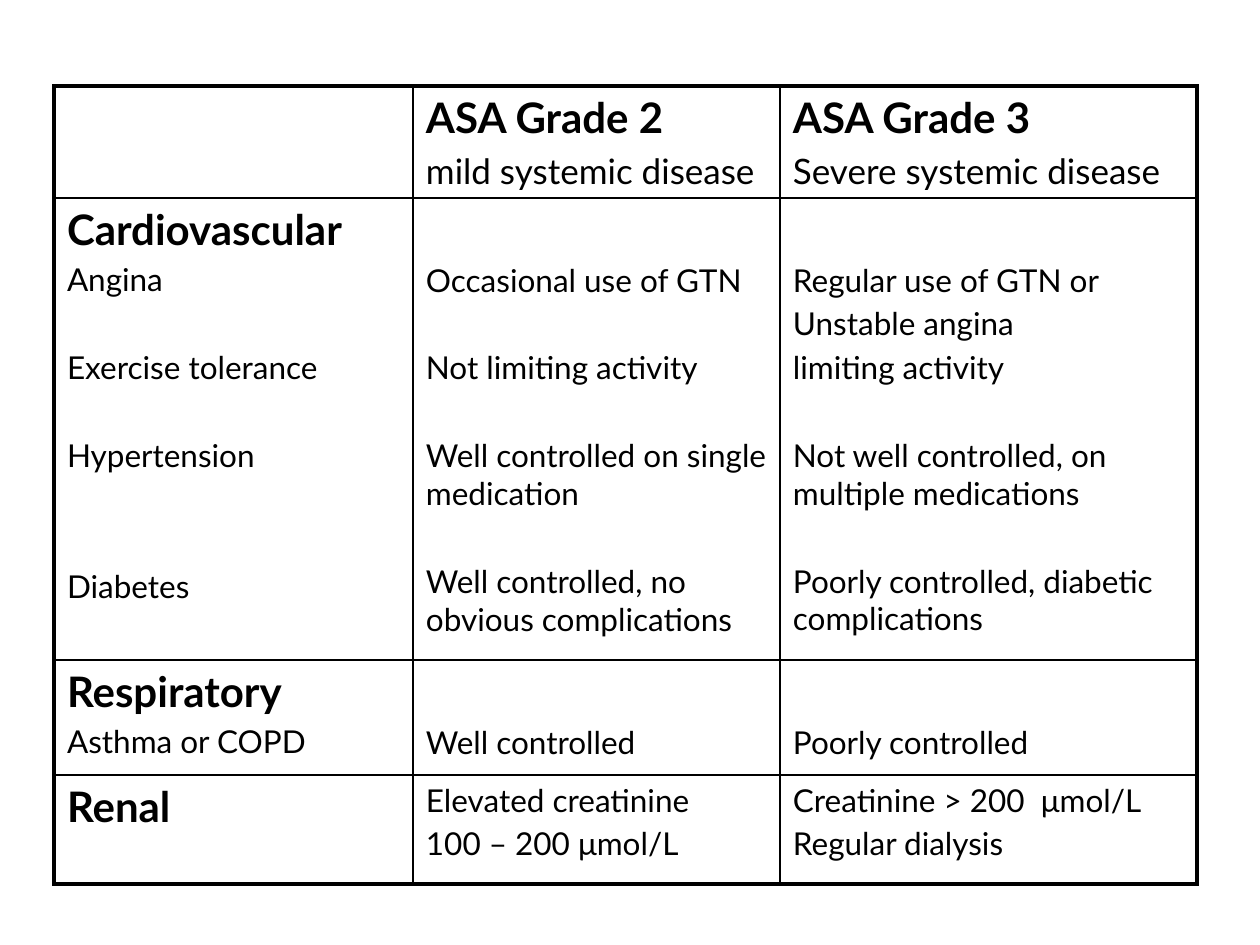
"""Build a slide with a table that compares ASA grade 2 with ASA grade 3."""
from dataclasses import dataclass, field

from lxml import etree
from pptx import Presentation
from pptx.dml.color import RGBColor
from pptx.enum.text import MSO_ANCHOR, PP_ALIGN
from pptx.oxml.ns import qn
from pptx.util import Emu, Pt

TOP, LEFT = MSO_ANCHOR.TOP, PP_ALIGN.LEFT
PX = 914400 / 126
BLANK_LAYOUT = 6


def px(n):
    return Emu(round(n * PX))


@dataclass
class Theme:
    ink: str = "000000"
    inner: float = 1
    outer: float = 2.25
    space: int = 6
    fonts: dict = field(default_factory=lambda: {
        "head": {"name": "Lato", "size": Pt(24), "bold": True},
        "sub": {"name": "Lato", "size": Pt(20), "bold": False},
        "body": {"name": "Lato", "size": Pt(18), "bold": False},
    })


class Deck:
    def __init__(self, theme, width, height):
        self.theme = theme
        self.prs = Presentation()
        self.prs.slide_width, self.prs.slide_height = px(width), px(height)
        self.s = self.prs.slides.add_slide(self.prs.slide_layouts[BLANK_LAYOUT])

    def table(self, x, y, cols, rows, cells):
        shape = self.s.shapes.add_table(
            len(rows), len(cols), px(x), px(y), px(sum(cols)), px(sum(rows)))
        table = shape.table
        table.first_row = table.horz_banding = False
        for col, width in zip(table.columns, cols):
            col.width = px(width)
        for row, height in zip(table.rows, rows):
            row.height = px(height)
        for i, line in enumerate(cells):
            for j, paragraphs in enumerate(line):
                cell = table.cell(i, j)
                edges = {"lnL": j == 0, "lnR": j == len(cols) - 1,
                         "lnT": i == 0, "lnB": i == len(rows) - 1}
                self.borders(cell, edges)
                cell.fill.background()
                self.text(cell, paragraphs)

    def borders(self, cell, edges):
        tcPr = cell._tc.get_or_add_tcPr()
        for tag, is_outer in edges.items():
            width = self.theme.outer if is_outer else self.theme.inner
            ln = etree.SubElement(tcPr, qn(f"a:{tag}"), w=str(Pt(width)))
            fill = etree.SubElement(ln, qn("a:solidFill"))
            etree.SubElement(fill, qn("a:srgbClr"), val=self.theme.ink)

    def text(self, cell, paragraphs):
        first_gap = paragraphs[0][2] if paragraphs else 0
        layout = {"margin_left": px(13), "margin_right": px(12),
                  "margin_top": px(6 + first_gap), "margin_bottom": px(6),
                  "vertical_anchor": TOP}
        for name, value in layout.items():
            setattr(cell, name, value)
        tf = cell.text_frame
        for k, (text, style, gap) in enumerate(paragraphs):
            p = tf.add_paragraph() if k else tf.paragraphs[0]
            p.alignment = LEFT
            p.space_before = px(self.theme.space + gap) if k else Pt(0)
            r = p.add_run()
            r.text = text
            for name, value in self.theme.fonts[style].items():
                setattr(r.font, name, value)
            r.font.color.rgb = RGBColor.from_string(self.theme.ink)

    def save(self):
        self.prs.save("out.pptx")


def head(text):
    return text, "head", 0


def sub(text):
    return text, "sub", 1


def body(text, gap=0):
    return text, "body", gap


def main():
    line, under_head = 44, 57
    cells = [
        [[],
         [head("ASA Grade 2"), sub("mild systemic disease")],
         [head("ASA Grade 3"), sub("Severe systemic disease")]],
        [[head("Cardiovascular"), body("Angina"), body("Exercise tolerance", line),
          body("Hypertension", line), body("Diabetes", 2 * line)],
         [body("Occasional use of GTN", under_head),
          body("Not limiting activity", line),
          body("Well controlled on single medication", line),
          body("Well controlled, no obvious complications", line)],
         [body("Regular use of GTN or", under_head), body("Unstable angina"),
          body("limiting activity"),
          body("Not well controlled, on multiple medications", line),
          body("Poorly controlled, diabetic complications", line)]],
        [[head("Respiratory"), body("Asthma or COPD")],
         [body("Well controlled", under_head)],
         [body("Poorly controlled", under_head)]],
        [[head("Renal")],
         [body("Elevated creatinine"), body("100 – 200 μmol/L")],
         [body("Creatinine > 200  μmol/L"), body("Regular dialysis")]],
    ]
    deck = Deck(Theme(), 1260, 945)
    deck.table(54, 86, [359, 367, 417], [112, 462, 115, 109], cells)
    deck.save()


if __name__ == "__main__":
    main()
